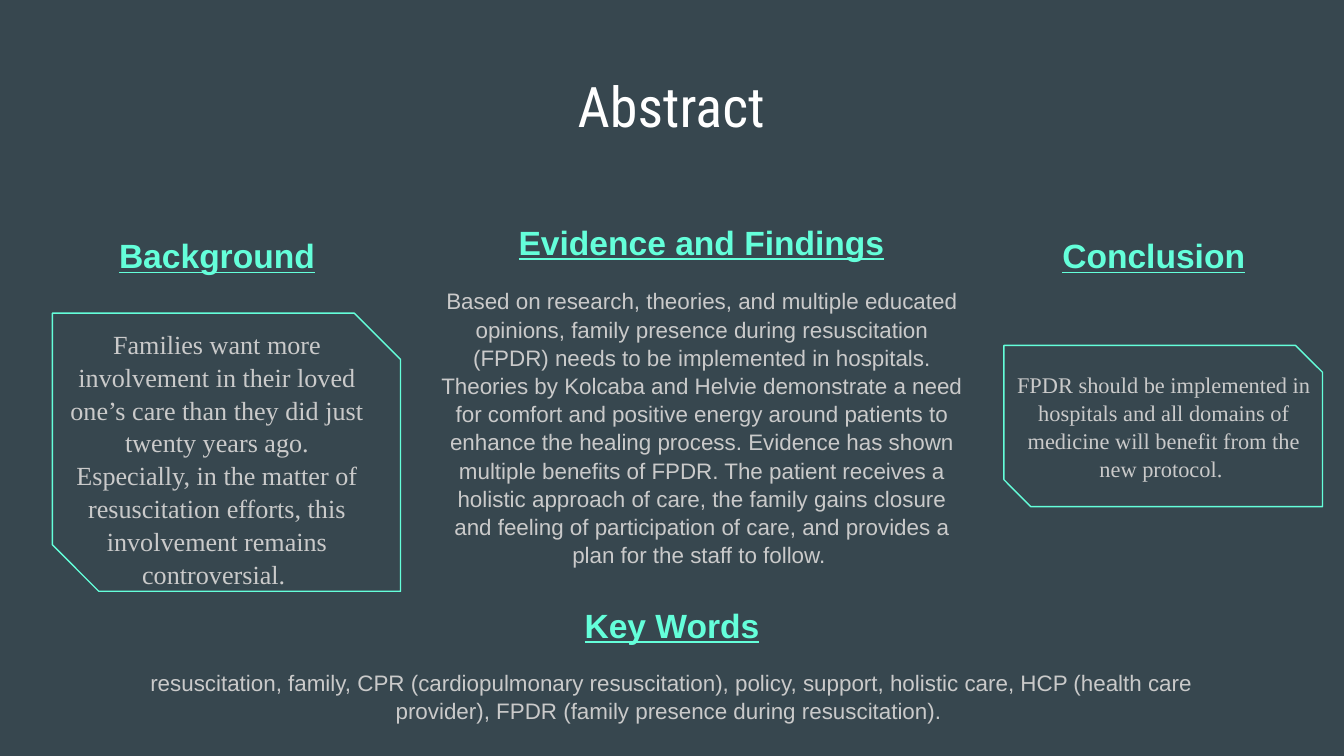
"""Builds the Abstract slide with headed text blocks and snipped frames."""
from dataclasses import dataclass

from pptx import Presentation
from pptx.dml.color import RGBColor
from pptx.enum.shapes import MSO_SHAPE
from pptx.enum.text import MSO_ANCHOR, PP_ALIGN
from pptx.util import Inches, Pt

SNIPPED = MSO_SHAPE.SNIP_2_DIAG_RECTANGLE
TOP = MSO_ANCHOR.TOP
LEFT = PP_ALIGN.LEFT
CENTER = PP_ALIGN.CENTER

SLIDE_WIDTH = Inches(10)
SLIDE_HEIGHT = Inches(5.625)
GRID_CELL = Inches(0.1)
INSET = Inches(0.1)
HEADING_ROWS = 4.8

COLORS = {"background": "37474F", "accent": "64FFDA", "title": "FFFFFF", "body": "CACACA"}

FORMATS = {
    "title": {"name": "Roboto Condensed", "size": Pt(30)},
    "heading": {"name": "Arial", "size": Pt(18), "bold": True, "underline": True},
    "sans": {"name": "Arial", "size": Pt(12)},
    "serif": {"name": "Times New Roman", "size": Pt(12)},
    "large serif": {"name": "Times New Roman", "size": Pt(14)},
}


@dataclass(frozen=True)
class Area:
    column: float
    row: float
    columns: float
    rows: float

    def lengths(self) -> list[int]:
        """Return left, top, width and height in slide units."""
        cells = (self.column, self.row, self.columns, self.rows)
        return [round(cell * GRID_CELL) for cell in cells]


@dataclass(frozen=True)
class TextBlock:
    area: Area
    text: str
    style: str
    color: str = "body"
    alignment: PP_ALIGN = CENTER
    line_spacing: float = 1.05


def heading(column: float, row: float, columns: float, text: str) -> TextBlock:
    """Describe an underlined accent heading."""
    area = Area(column, row, columns, HEADING_ROWS)
    return TextBlock(area, text, "heading", "accent", line_spacing=1.0)


FRAMES = [Area(74.7, 25.7, 23.7, 12), Area(3.9, 23.3, 25.9, 20.7)]

TEXT_BLOCKS = [
    TextBlock(Area(42, 4.3, 18, 6.3), "Abstract", "title", "title", LEFT, 1.0),
    TextBlock(
        Area(3.9, 23.3, 24.5, 17.8),
        "Families want more involvement in their loved one’s care than they did just "
        "twenty years ago. Especially, in the matter of resuscitation efforts, this "
        "involvement remains controversial. ",
        "large serif",
    ),
    heading(6, 16.5, 20.3, "Background"),
    TextBlock(
        Area(31.6, 20.3, 41.3, 22.8),
        "Based on research, theories, and multiple educated opinions, family presence "
        "during resuscitation (FPDR) needs to be implemented in hospitals. Theories by "
        "Kolcaba and Helvie demonstrate a need for comfort and positive energy around "
        "patients to enhance the healing process. Evidence has shown multiple benefits "
        "of FPDR. The patient receives a holistic approach of care, the family gains "
        "closure and feeling of participation of care, and provides a plan for the "
        "staff to follow. ",
        "sans",
    ),
    heading(36.5, 15.5, 31.4, "Evidence and Findings"),
    TextBlock(
        Area(73.9, 26.5, 25.4, 10.4),
        "FPDR should be implemented in hospitals and all domains of medicine will "
        "benefit from the new protocol. ",
        "serif",
    ),
    TextBlock(
        Area(6.5, 48.7, 87, 5.7),
        "resuscitation, family, CPR (cardiopulmonary resuscitation), policy, support, "
        "holistic care, HCP (health care provider), FPDR (family presence during "
        "resuscitation). ",
        "sans",
    ),
    heading(34.3, 44, 31.4, "Key Words"),
    heading(74.6, 16.5, 22.5, "Conclusion"),
]


def draw_frame(slide, area: Area) -> None:
    """Draw an unfilled outline with two snipped corners."""
    shape = slide.shapes.add_shape(SNIPPED, *area.lengths())
    shape.shadow.inherit = False
    shape.fill.background()
    shape.line.color.rgb = RGBColor.from_string(COLORS["accent"])
    shape.line.width = Pt(0.75)


def draw_text(slide, block: TextBlock) -> None:
    """Draw one wrapped text block."""
    frame = slide.shapes.add_textbox(*block.area.lengths()).text_frame
    frame.word_wrap = True
    frame.vertical_anchor = TOP
    for side in ("left", "top", "right", "bottom"):
        setattr(frame, f"margin_{side}", INSET)
    paragraph = frame.paragraphs[0]
    paragraph.alignment = block.alignment
    paragraph.line_spacing = block.line_spacing
    run = paragraph.add_run()
    run.text = block.text
    for attribute, value in FORMATS[block.style].items():
        setattr(run.font, attribute, value)
    run.font.color.rgb = RGBColor.from_string(COLORS[block.color])


def main() -> None:
    """Build and save the presentation."""
    presentation = Presentation()
    presentation.slide_width = SLIDE_WIDTH
    presentation.slide_height = SLIDE_HEIGHT
    slide = presentation.slides.add_slide(presentation.slide_layouts[6])
    slide.background.fill.solid()
    slide.background.fill.fore_color.rgb = RGBColor.from_string(COLORS["background"])
    for area in FRAMES:
        draw_frame(slide, area)
    for block in TEXT_BLOCKS:
        draw_text(slide, block)
    presentation.save("out.pptx")


if __name__ == "__main__":
    main()
